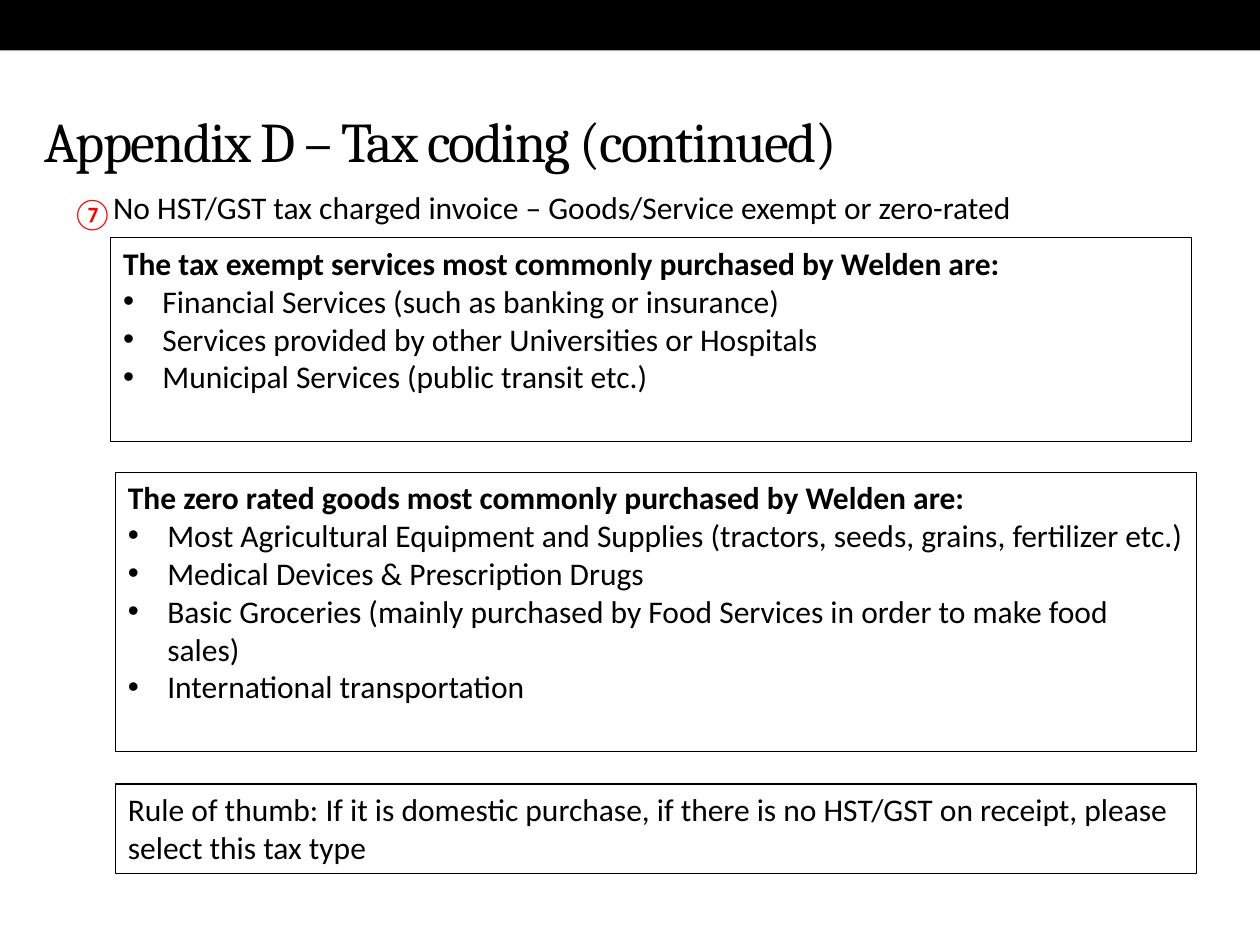
"""Build the tax coding appendix slide."""
from lxml.etree import SubElement
from pptx import Presentation
from pptx.dml.color import RGBColor
from pptx.enum.shapes import MSO_SHAPE
from pptx.enum.text import MSO_ANCHOR, MSO_AUTO_SIZE, PP_ALIGN
from pptx.oxml.ns import qn
from pptx.util import Pt

TITLE = "Appendix D – Tax coding (continued)"
TOPIC = "No HST/GST tax charged invoice – Goods/Service exempt or zero-rated"
MARK = "⑦"
BOXES = [
    ((63.2, 135.9, 617.8, 116.6),
     "The tax exempt services most commonly purchased by Welden are:",
     ["Financial Services (such as banking or insurance)",
      "Services provided by other Universities or Hospitals",
      "Municipal Services (public transit etc.)"]),
    ((66, 269.8, 617.8, 159.8),
     "The zero rated goods most commonly purchased by Welden are:",
     ["Most Agricultural Equipment and Supplies (tractors, seeds, grains, fertilizer etc.)",
      "Medical Devices & Prescription Drugs",
      "Basic Groceries (mainly purchased by Food Services in order to make food sales)",
      "International transportation"]),
    ((66, 448, 617.8, 51),
     "Rule of thumb: If it is domestic purchase, if there is no HST/GST on receipt, "
     "please select this tax type", []),
]
BLACK, RED = "000000", "FF0000"
HEAD = {"name": "Cambria", "size": Pt(32)}
BODY = {"name": "Calibri", "size": Pt(18), "bold": False}
BOLD = {**BODY, "bold": True}
FRAME = {"word_wrap": True, "auto_size": MSO_AUTO_SIZE.NONE,
         "vertical_anchor": MSO_ANCHOR.TOP}


def paint(target, color):
    target.rgb = RGBColor.from_string(color)


def apply(target, values):
    for name, value in values.items():
        setattr(target, name, value)


def place(shape, area):
    apply(shape, dict(zip(("left", "top", "width", "height"), map(Pt, area))))


def write(para, text, font, color=BLACK):
    para.alignment = PP_ALIGN.LEFT
    run = para.add_run()
    run.text = text
    apply(run.font, font)
    paint(run.font.color, color)
    return run


def indent(para, left, hang=0, mark=None):
    props = para._p.get_or_add_pPr()
    props.set("marL", str(Pt(left)))
    props.set("indent", str(Pt(-hang)))
    if mark:
        SubElement(props, qn("a:buFont")).set("typeface", "Arial")
        SubElement(props, qn("a:buChar")).set("char", mark)
    else:
        SubElement(props, qn("a:buNone"))


def rect(slide, area):
    shape = slide.shapes.add_shape(MSO_SHAPE.RECTANGLE, *map(Pt, area))
    shape.shadow.inherit = False
    return shape


def add_box(slide, area, head, items):
    shape = rect(slide, area)
    shape.fill.background()
    shape.line.width = Pt(0.75)
    paint(shape.line.color, BLACK)
    frame = shape.text_frame
    apply(frame, FRAME)
    write(frame.paragraphs[0], head, BOLD if items else BODY)
    for item in items:
        para = frame.add_paragraph()
        indent(para, 22.5, 22.5, "•")
        write(para, item, BODY)


def main():
    deck = Presentation()
    apply(deck, {"slide_width": Pt(720), "slide_height": Pt(540)})
    slide = deck.slides.add_slide(deck.slide_layouts[1])

    bar = rect(slide, (0, 0, 720, 28.8))
    bar.fill.solid()
    paint(bar.fill.fore_color, BLACK)
    bar.line.fill.background()

    title, topic = slide.placeholders
    place(title, (18, 41, 648, 77.8))
    apply(title.text_frame, {**FRAME, "vertical_anchor": MSO_ANCHOR.MIDDLE})
    run = write(title.text_frame.paragraphs[0], TITLE, HEAD)
    run.font._element.set("spc", "-100")

    place(topic, (33, 103.7, 648, 29))
    apply(topic.text_frame, FRAME)
    para = topic.text_frame.paragraphs[0]
    indent(para, 24.5)
    write(para, TOPIC, BODY)

    for box in BOXES:
        add_box(slide, *box)

    badge = slide.shapes.add_textbox(*map(Pt, (33.8, 105.8, 32.4, 29.5)))
    apply(badge.text_frame, {**FRAME, "word_wrap": False})
    para = badge.text_frame.paragraphs[0]
    apply(para, {"line_spacing": 1.07, "space_after": Pt(8)})
    write(para, MARK, BODY, RED)
    deck.save("out.pptx")


if __name__ == "__main__":
    main()
